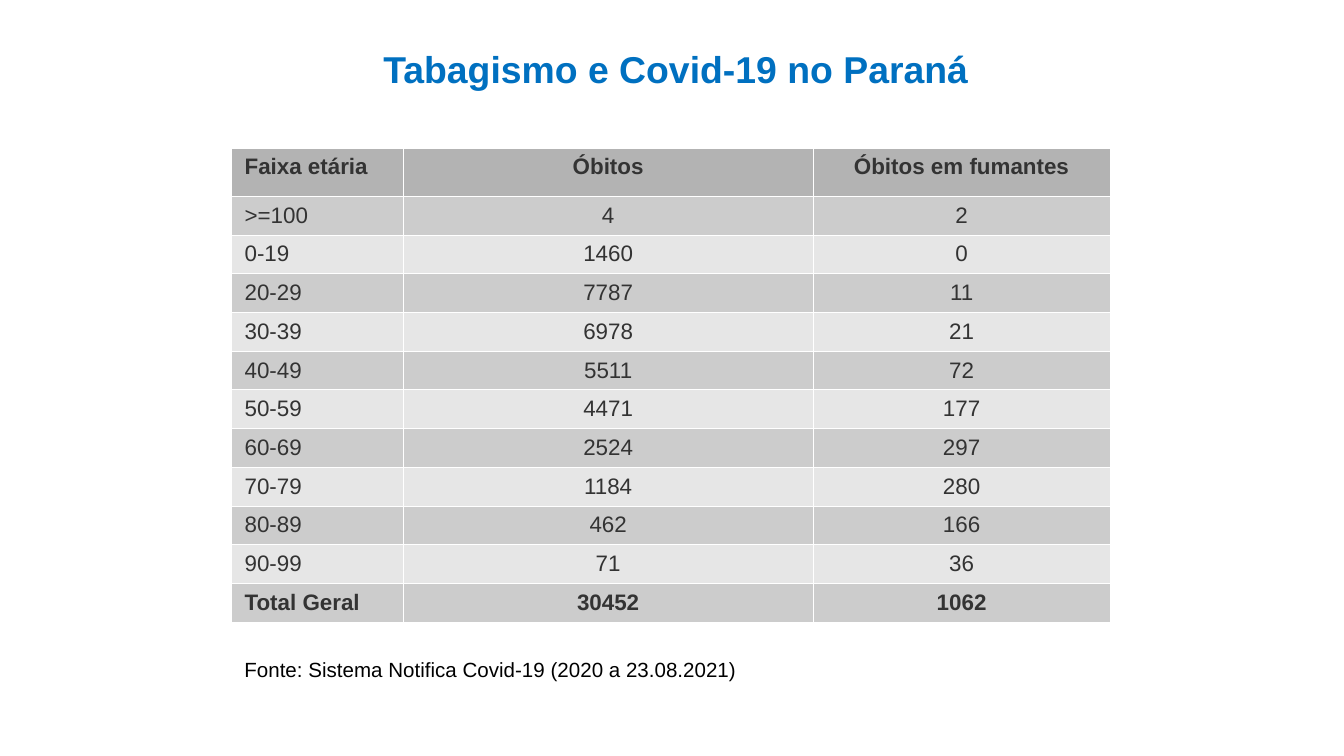
import pptx
import pptx.dml.color
import pptx.enum.text
import pptx.oxml
import pptx.oxml.ns
import pptx.util

Inches = pptx.util.Inches
Align = pptx.enum.text.PP_ALIGN

HEAD = ("Faixa etária", "Óbitos", "Óbitos em fumantes")
DEATHS = [
    (">=100", 4, 2),
    ("0-19", 1460, 0),
    ("20-29", 7787, 11),
    ("30-39", 6978, 21),
    ("40-49", 5511, 72),
    ("50-59", 4471, 177),
    ("60-69", 2524, 297),
    ("70-79", 1184, 280),
    ("80-89", 462, 166),
    ("90-99", 71, 36),
]
TOTAL = ("Total Geral", 30452, 1062)
ROWS = [HEAD, *DEATHS, TOTAL]
WIDTHS = (1.28, 3.05, 2.21)
HEAD_H, BODY_H = 0.36, 3.17
ROW_H = BODY_H / (len(ROWS) - 1)
LEFT = 1.72


def color(code):
    return pptx.dml.color.RGBColor.from_string(code)


def write(frame, text, size, code, bold=False, align=Align.LEFT):
    frame.text = text
    para = frame.paragraphs[0]
    para.alignment = align
    for run in para.runs:
        run.font.name = "Arial"
        run.font.size = pptx.util.Pt(size)
        run.font.bold = bold
        run.font.color.rgb = color(code)


def border(cell):
    """Draw thin white lines on all four sides, ahead of the cell's fill."""
    props = cell._tc.get_or_add_tcPr()
    for spot, side in enumerate(("lnL", "lnR", "lnT", "lnB")):
        line = pptx.oxml.parse_xml(
            f'<a:{side} {pptx.oxml.ns.nsdecls("a")} w="762"><a:solidFill>'
            f'<a:srgbClr val="FFFFFF"/></a:solidFill></a:{side}>')
        props.insert(spot, line)


def add_title(slide, text):
    title = slide.shapes.title
    title.left, title.top = Inches(0.28), Inches(0.29)
    title.width, title.height = Inches(9.5), Inches(0.55)
    frame = title.text_frame
    frame.margin_left = frame.margin_right = frame.margin_bottom = 0
    frame.margin_top = Inches(0.05)
    frame.vertical_anchor = pptx.enum.text.MSO_ANCHOR.TOP
    frame.auto_size = pptx.enum.text.MSO_AUTO_SIZE.NONE
    write(frame, text, 20, "0070C0", True, Align.CENTER)


def add_grid(slide):
    table = slide.shapes.add_table(
        len(ROWS), len(HEAD), Inches(LEFT), Inches(1.1),
        Inches(sum(WIDTHS)), Inches(HEAD_H + BODY_H)).table
    for col, width in zip(table.columns, WIDTHS):
        col.width = Inches(width)
    for r, row in enumerate(ROWS):
        table.rows[r].height = Inches(ROW_H if r else HEAD_H)
        fill = "B3B3B3" if r == 0 else "CCCCCC" if r % 2 else "E6E6E6"
        for c, value in enumerate(row):
            cell = table.cell(r, c)
            cell.fill.solid()
            cell.fill.fore_color.rgb = color(fill)
            border(cell)
            write(cell.text_frame, str(value), 12, "333333",
                  row in (HEAD, TOTAL), Align.CENTER if c else Align.LEFT)


def add_note(slide, text):
    box = slide.shapes.add_textbox(
        Inches(LEFT), Inches(4.84), Inches(5.43), Inches(0.37))
    box.text_frame.word_wrap = True
    write(box.text_frame, text, 11, "000000")


def main():
    deck = pptx.Presentation()
    deck.slide_width = Inches(10)
    deck.slide_height = deck.slide_width * 9 // 16
    slide = deck.slides.add_slide(deck.slide_layouts.get_by_name("Title Only"))
    add_title(slide, "Tabagismo e Covid-19 no Paraná")
    add_grid(slide)
    add_note(slide, "Fonte: Sistema Notifica Covid-19 (2020 a 23.08.2021)")
    deck.save("out.pptx")


if __name__ == "__main__":
    main()
